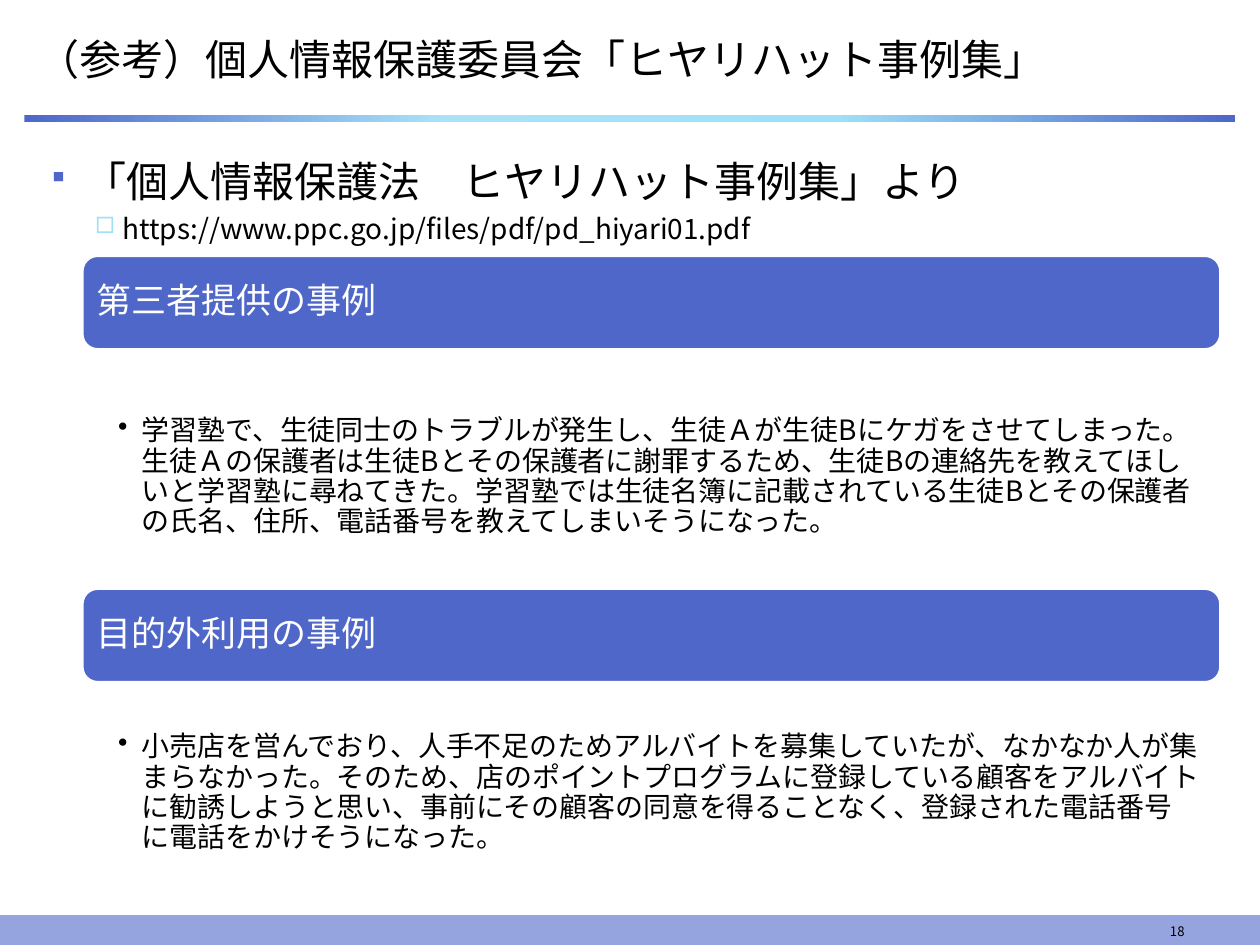
from dataclasses import dataclass

from lxml.etree import SubElement
from pptx import Presentation
from pptx.dml.color import RGBColor
from pptx.enum.shapes import MSO_SHAPE as Shape
from pptx.enum.text import MSO_ANCHOR as Anchor, PP_ALIGN as Align
from pptx.oxml.ns import qn
from pptx.util import Pt

TITLE = "（参考）個人情報保護委員会「ヒヤリハット事例集」"
SOURCE = "「個人情報保護法　ヒヤリハット事例集」より"
SOURCE_URL = "https://www.ppc.go.jp/files/pdf/pd_hiyari01.pdf"
PAGE_NUMBER = "18"
# heading, description, height of the description, its top inset
CASES = [
    ("第三者提供の事例",
     "学習塾で、生徒同士のトラブルが発生し、生徒Ａが生徒Bにケガをさせてしまった。"
     "生徒Ａの保護者は生徒Bとその保護者に謝罪するため、生徒Bの連絡先を教えてほしいと"
     "学習塾に尋ねてきた。学習塾では生徒名簿に記載されている生徒Bとその保護者の氏名、"
     "住所、電話番号を教えてしまいそうになった。",
     136.2, 11.2),
    ("目的外利用の事例",
     "小売店を営んでおり、人手不足のためアルバイトを募集していたが、なかなか人が"
     "集まらなかった。そのため、店のポイントプログラムに登録している顧客をアルバイトに"
     "勧誘しようと思い、事前にその顧客の同意を得ることなく、登録された電話番号に"
     "電話をかけそうになった。",
     125.3, 2.9),
]


@dataclass(frozen=True)
class Theme:
    font: str = "Noto Sans CJK JP"
    symbols: str = "Wingdings"
    text: str = "000000"
    white: str = "FFFFFF"
    blue: str = "4E67C8"
    footer: str = "95A4DE"
    pale: str = "9EE0F7"
    rule: tuple = ((0, "4E67C8"), (35, "A9E3F8"), (67, "9EE0F7"), (100, "4E67C8"))
    title_size: float = 24
    heading_size: float = 20
    body_size: float = 16
    number_size: float = 7.5


THEME = Theme()
SLIDE_W, SLIDE_H = 720, 540
MARGIN, CONTENT_W = 14, 692
FOOTER_H = 17
CASE_LEFT, CASE_TOP, CASE_W, HEADING_H = 46.8, 145.9, 650.9, 54


def rgb(value):
    return RGBColor.from_string(value)


def set_frame(frame, anchor, insets=(7.2, 3.6, 7.2, 3.6)):
    frame.word_wrap = True
    frame.vertical_anchor = anchor
    (frame.margin_left, frame.margin_top,
     frame.margin_right, frame.margin_bottom) = map(Pt, insets)


def write(paragraph, text, size, color=THEME.text, align=Align.LEFT,
          before=0, after=0, spacing=1.0):
    paragraph.text = text
    paragraph.alignment = align
    paragraph.space_before, paragraph.space_after = Pt(before), Pt(after)
    paragraph.line_spacing = spacing
    for run in paragraph.runs:
        run.font.size = Pt(size)
        run.font.name = THEME.font
        run.font.color.rgb = rgb(color)
        SubElement(run.font._element, qn("a:ea"), typeface=THEME.font)


def add_bullet(paragraph, char, left, hanging, color=THEME.text, percent=100, font=None):
    props = paragraph._p.get_or_add_pPr()
    props.set("marL", str(Pt(left)))
    props.set("indent", str(-Pt(hanging)))
    SubElement(SubElement(props, qn("a:buClr")), qn("a:srgbClr"), val=color)
    SubElement(props, qn("a:buSzPct"), val=str(percent * 1000))
    if font:
        SubElement(props, qn("a:buFont"), typeface=font, charset="2")
    SubElement(props, qn("a:buChar"), char=char)


def add_panel(slide, kind, box, fill, line=None, line_width=0.75):
    panel = slide.shapes.add_shape(kind, *map(Pt, box))
    panel.shadow.inherit = False
    panel.fill.solid()
    panel.fill.fore_color.rgb = rgb(fill)
    if line:
        panel.line.color.rgb = rgb(line)
        panel.line.width = Pt(line_width)
    else:
        panel.line.fill.background()
    return panel


def add_text_frame(slide, box, anchor, insets=(7.2, 3.6, 7.2, 3.6)):
    frame = slide.shapes.add_textbox(*map(Pt, box)).text_frame
    set_frame(frame, anchor, insets)
    return frame


def add_rule(slide):
    rule = add_panel(slide, Shape.RECTANGLE, (MARGIN, 66, CONTENT_W, 3.6), THEME.blue)
    rule.fill.gradient()
    rule.fill.gradient_angle = 0
    stops = rule._element.spPr.find(qn("a:gradFill")).find(qn("a:gsLst"))
    for stop in list(stops):
        stops.remove(stop)
    for position, color in THEME.rule:
        stop = SubElement(stops, qn("a:gs"), pos=str(position * 1000))
        SubElement(stop, qn("a:srgbClr"), val=color)


def add_title(slide):
    title = slide.shapes.title
    title.left, title.top, title.width, title.height = map(Pt, (14.4, 10, CONTENT_W, 46.8))
    set_frame(title.text_frame, Anchor.MIDDLE)
    write(title.text_frame.paragraphs[0], TITLE, THEME.title_size)


def add_source(slide):
    frame = add_text_frame(slide, (22.3, 85.3, 683.3, 60), Anchor.TOP)
    source = frame.paragraphs[0]
    write(source, SOURCE, THEME.title_size, before=4.8)
    add_bullet(source, "§", 18.7, 18.7, THEME.blue, 75, THEME.symbols)
    url = frame.add_paragraph()
    write(url, SOURCE_URL, THEME.body_size, before=3.2)
    url.level = 1
    add_bullet(url, "¨", 40.7, 15.8, THEME.pale, 80, THEME.symbols)


def add_cases(slide):
    top = CASE_TOP
    for heading, description, height, top_inset in CASES:
        panel = add_panel(slide, Shape.ROUNDED_RECTANGLE,
                          (CASE_LEFT, top, CASE_W, HEADING_H),
                          THEME.blue, THEME.white, 2)
        set_frame(panel.text_frame, Anchor.MIDDLE, (5.8, 5.4, 5.4, 5.4))
        write(panel.text_frame.paragraphs[0], heading, THEME.heading_size,
              THEME.white, after=7, spacing=0.9)
        top += HEADING_H
        frame = add_text_frame(slide, (CASE_LEFT, top, CASE_W, height),
                               Anchor.MIDDLE, (20.7, top_inset, 11.2, 2))
        detail = frame.paragraphs[0]
        write(detail, description, THEME.body_size, after=3.2, spacing=0.9)
        detail.level = 1
        add_bullet(detail, "•", 13.5, 13.5)
        detail._p.get_or_add_pPr().set("hangingPunct", "0")
        top += height


def add_footer(slide):
    top = SLIDE_H - FOOTER_H
    add_panel(slide, Shape.RECTANGLE, (0, top, SLIDE_W, FOOTER_H),
              THEME.footer, THEME.footer)
    number = add_text_frame(slide, (516, top, 168, FOOTER_H), Anchor.BOTTOM)
    write(number.paragraphs[0], PAGE_NUMBER, THEME.number_size, align=Align.RIGHT)


def main():
    deck = Presentation()
    deck.slide_width, deck.slide_height = Pt(SLIDE_W), Pt(SLIDE_H)
    slide = deck.slides.add_slide(deck.slide_layouts[5])
    add_rule(slide)
    add_title(slide)
    add_source(slide)
    add_cases(slide)
    add_footer(slide)
    deck.save("out.pptx")


if __name__ == "__main__":
    main()
